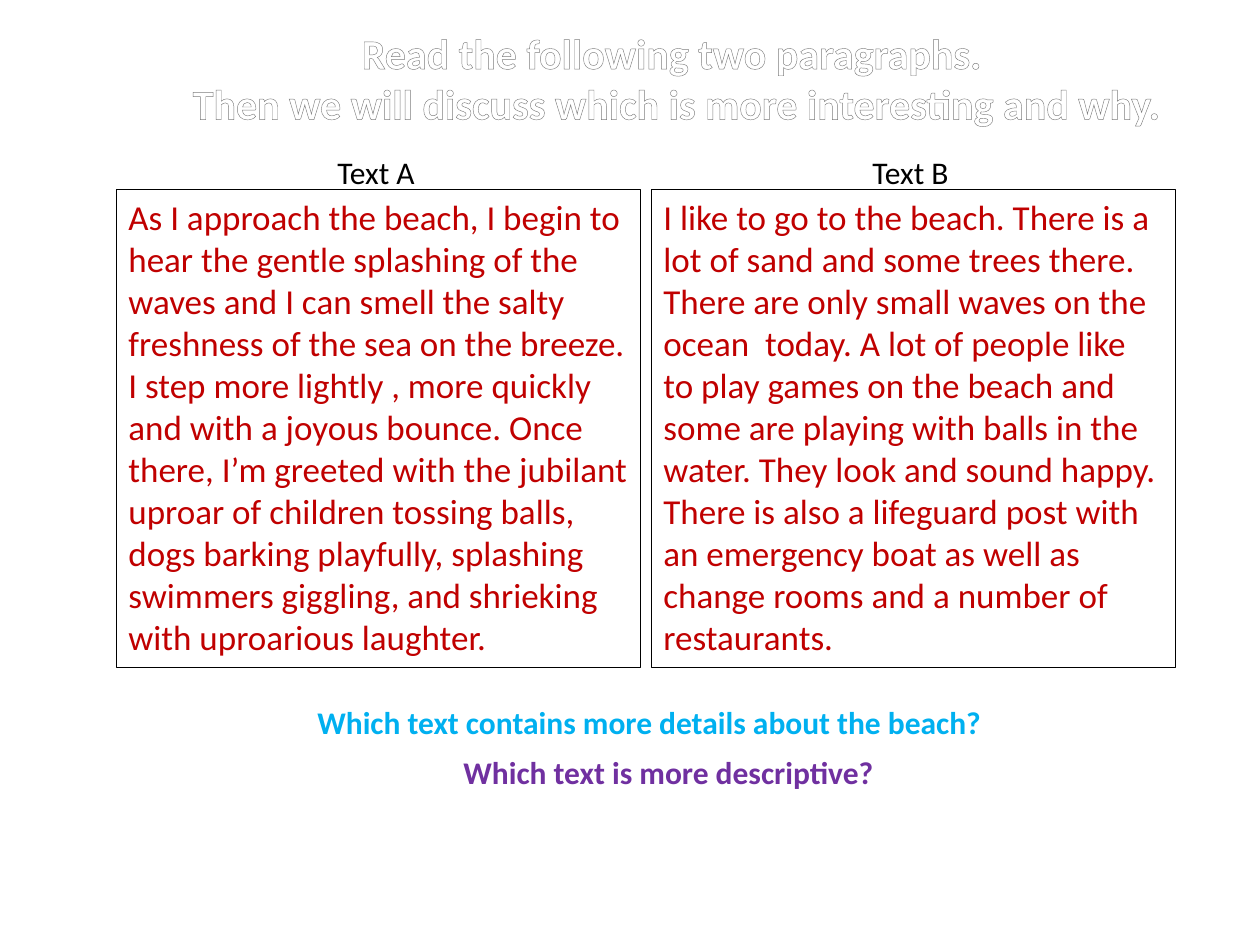
import pptx
import pptx.dml.color
import pptx.enum.shapes
import pptx.enum.text
import pptx.oxml
import pptx.oxml.ns
import pptx.util
from dataclasses import dataclass

SCALE = 914400 / 126  # EMU in one px


@dataclass(frozen=True)
class Theme:
    font: str = "Calibri"
    ink: str = "000000"
    body: str = "C00000"
    blue: str = "00B0F0"
    plum: str = "7030A0"
    edge: str = "7D7D7D"
    glow: tuple = ((0, "FFFFFF"), (9, "FFFFFF"), (50, "7F7F7F"), (79, "FFFFFF"), (100, "FFFFFF"))
    head: int = 24
    read: int = 20
    note: int = 18
    rule: float = 0.5


@dataclass(frozen=True)
class Box:
    left: int
    top: int
    wide: int
    high: int


@dataclass(frozen=True)
class Label:
    text: str
    box: Box
    tint: str
    bold: bool = False


@dataclass(frozen=True)
class Panel:
    name: str
    text: str


THEME = Theme()

# Content
TITLE = (
    "Read the following two paragraphs. ",
    "Then we will discuss which is more interesting and why.",
)
PANELS = (
    Panel("Text A",
          "As I approach the beach, I begin to hear the gentle splashing of the waves and I can "
          "smell the salty freshness of the sea on the breeze. I step more lightly , more quickly "
          "and with a joyous bounce. Once there, I’m greeted with the jubilant uproar of children "
          "tossing balls, dogs barking playfully, splashing swimmers giggling, and shrieking with "
          "uproarious laughter."),
    Panel("Text B",
          "I like to go to the beach. There is a lot of sand and some trees there. There are only "
          "small waves on the ocean  today. A lot of people like to play games on the beach and "
          "some are playing with balls in the water. They look and sound happy. There is also a "
          "lifeguard post with an emergency boat as well as change rooms and a number of "
          "restaurants."),
)
ASKS = (
    Label("Which text contains more details about the beach?", Box(305, 697, 945, 50),
          THEME.blue, True),
    Label("Which text is more descriptive?", Box(451, 747, 462, 50), THEME.plum, True),
)


def px(num: int) -> int:
    return round(num * SCALE)


def place(box: Box) -> tuple:
    return px(box.left), px(box.top), px(box.wide), px(box.high)


def color(tint: str):
    return pptx.dml.color.RGBColor.from_string(tint)


def add_run(para, text: str, size: int, bold: bool = False):
    run = para.add_run()
    run.text = text
    run.font.name = THEME.font
    run.font.size = pptx.util.Pt(size)
    run.font.bold = bold
    return run


def add_glow(run) -> None:
    """Give a run an outline and a vertical gradient fill."""
    space = pptx.oxml.ns.nsdecls("a")
    stops = "".join(f'<a:gs pos="{pos * 1000}"><a:srgbClr val="{tint}"/></a:gs>'
                    for pos, tint in THEME.glow)
    line = (f'<a:ln {space} w="10541"><a:solidFill><a:srgbClr val="{THEME.edge}"/>'
            "</a:solidFill></a:ln>")
    fill = (f'<a:gradFill {space}><a:gsLst>{stops}</a:gsLst>'
            '<a:lin ang="5400000" scaled="0"/></a:gradFill>')
    props = run.font._element
    for spot, part in enumerate((line, fill)):
        props.insert(spot, pptx.oxml.parse_xml(part))


def draw_title(slide, box: Box) -> None:
    frame = slide.shapes.add_textbox(*place(box)).text_frame
    frame.word_wrap = False
    for num, text in enumerate(TITLE):
        para = frame.add_paragraph() if num else frame.paragraphs[0]
        para.alignment = pptx.enum.text.PP_ALIGN.CENTER
        add_glow(add_run(para, text, THEME.head, True))


def draw_label(slide, label: Label) -> None:
    frame = slide.shapes.add_textbox(*place(label.box)).text_frame
    frame.word_wrap = True
    run = add_run(frame.paragraphs[0], label.text, THEME.note, label.bold)
    run.font.color.rgb = color(label.tint)


def draw_panel(slide, panel: Panel, box: Box) -> None:
    shape = slide.shapes.add_shape(pptx.enum.shapes.MSO_SHAPE.RECTANGLE, *place(box))
    shape.shadow.inherit = False
    shape.fill.background()
    shape.line.color.rgb = color(THEME.ink)
    shape.line.width = pptx.util.Pt(THEME.rule)
    frame = shape.text_frame
    frame.word_wrap = True
    frame.vertical_anchor = pptx.enum.text.MSO_ANCHOR.TOP
    para = frame.paragraphs[0]
    para.alignment = pptx.enum.text.PP_ALIGN.LEFT
    add_run(para, panel.text, THEME.read).font.color.rgb = color(THEME.body)


def main() -> None:
    deck = pptx.Presentation()
    deck.slide_width, deck.slide_height = px(1260), px(945)
    slide = deck.slides.add_slide(deck.slide_layouts[6])

    draw_title(slide, Box(170, 21, 1013, 115))

    # Two panels side by side, each under its name
    wide, gap = 525, 10
    for num, panel in enumerate(PANELS):
        left = 116 + num * (wide + gap)
        draw_panel(slide, panel, Box(left, 189, wide, 479))
        draw_label(slide, Label(panel.name, Box(left + 209, 147, 136, 50), THEME.ink))

    # Questions
    for ask in ASKS:
        draw_label(slide, ask)

    deck.save("out.pptx")


if __name__ == "__main__":
    main()
